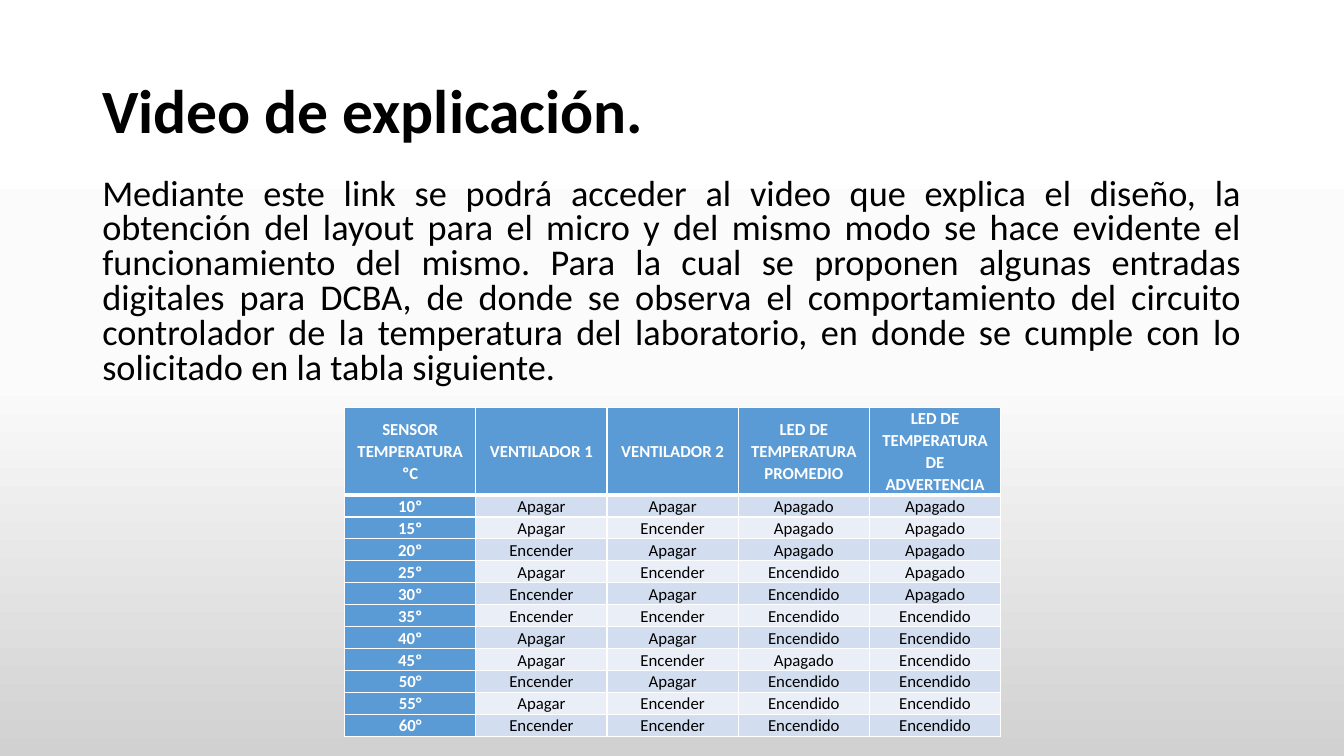
from copy import deepcopy

from pptx import Presentation
from pptx.dml.color import RGBColor as RGB
from pptx.enum.text import MSO_ANCHOR as Anchor, PP_ALIGN as Align
from pptx.oxml.ns import qn
from pptx.oxml.xmlchemy import OxmlElement as Elem
from pptx.util import Pt

FONT = "Calibri"
BLACK = RGB(0x00, 0x00, 0x00)
WHITE = RGB(0xFF, 0xFF, 0xFF)
BLUE = RGB(0x5B, 0x9B, 0xD5)
BANDS = [RGB(0xD2, 0xDE, 0xEF), RGB(0xEA, 0xEF, 0xF7)]
SHADES = [(0, WHITE), (0.5, RGB(0xFB, 0xFB, 0xFB)), (1, RGB(0xD1, 0xD1, 0xD1))]

TITLE = "Video de explicación."
BODY = (
    "Mediante este link se podrá acceder al video que explica el diseño, la "
    "obtención del layout para el micro y del mismo modo se hace evidente el "
    "funcionamiento del mismo. Para la cual se proponen algunas entradas "
    "digitales para DCBA, de donde se observa el comportamiento del circuito "
    "controlador de la temperatura del laboratorio, en donde se cumple con lo "
    "solicitado en la tabla siguiente."
)
HEADS = [
    "SENSOR TEMPERATURA ºC",
    "VENTILADOR 1",
    "VENTILADOR 2",
    "LED DE TEMPERATURA PROMEDIO",
    "LED DE TEMPERATURA DE ADVERTENCIA",
]
STATES = """\
10º Apagar Apagar Apagado Apagado
15º Apagar Encender Apagado Apagado
20º Encender Apagar Apagado Apagado
25º Apagar Encender Encendido Apagado
30º Encender Apagar Encendido Apagado
35º Encender Encender Encendido Encendido
40º Apagar Apagar Encendido Encendido
45º Apagar Encender Apagado Encendido
50° Encender Apagar Encendido Encendido
55° Apagar Encender Encendido Encendido
60° Encender Encender Encendido Encendido"""


def apply(item, style):
    for key, value in style.items():
        setattr(item, key, value)


def write(frame, text, para, font, color):
    line = frame.paragraphs[0]
    apply(line, para)
    run = line.add_run()
    run.text = text
    apply(run.font, {"name": FONT, **font})
    run.font.color.rgb = color


def add_back(slide):
    fill = slide.background.fill
    fill.gradient()
    fill.gradient_angle = 270
    stops = slide.element.find(".//" + qn("a:gsLst"))
    stops.append(deepcopy(stops[0]))
    for stop, (place, color) in zip(fill.gradient_stops, SHADES):
        stop.position = place
        stop.color.rgb = color


def add_text(slide, box, text, anchor, para, font):
    frame = slide.shapes.add_textbox(*map(Pt, box)).text_frame
    apply(frame, {"word_wrap": True, "vertical_anchor": anchor})
    write(frame, text, para, font, BLACK)


def add_edge(cell, side, width):
    edge = Elem("a:ln" + side)
    edge.set("w", str(Pt(width)))
    fill = Elem("a:solidFill")
    color = Elem("a:srgbClr")
    color.set("val", str(WHITE))
    fill.append(color)
    edge.append(fill)
    cell._tc.get_or_add_tcPr().append(edge)


def fill_cell(cell, text, row, col):
    head = row == 0 or col == 0
    apply(cell, {
        "margin_left": Pt(5), "margin_right": Pt(5),
        "margin_top": 0, "margin_bottom": 0,
        "vertical_anchor": Anchor.MIDDLE,
    })
    thick = {0: "B", 1: "T"}.get(row)
    for side in "LRTB":
        add_edge(cell, side, 3 if side == thick else 1)
    cell.fill.solid()
    cell.fill.fore_color.rgb = BLUE if head else BANDS[(row - 1) % 2]
    write(cell.text_frame, text,
          {"alignment": Align.CENTER, "line_spacing": 1.07},
          {"size": Pt(12), "bold": head}, WHITE if head else BLACK)


def add_grid(slide, box, rows, tall, low):
    shape = slide.shapes.add_table(len(rows), len(rows[0]), *map(Pt, box))
    table = shape.table
    for i, row in enumerate(rows):
        table.rows[i].height = Pt(low if i else tall)
        for j, text in enumerate(row):
            fill_cell(table.cell(i, j), text, i, j)


def main():
    deck = Presentation()
    apply(deck, {"slide_width": Pt(960), "slide_height": Pt(540)})
    slide = deck.slides.add_slide(deck.slide_layouts[6])
    add_back(slide)
    add_text(slide, (66, 28.75, 828, 104.4), TITLE, Anchor.MIDDLE,
             {"line_spacing": 0.9}, {"size": Pt(44), "bold": True})
    add_text(slide, (66, 123.8, 828, 173.5), BODY, Anchor.TOP,
             {"alignment": Align.JUSTIFY, "line_spacing": 0.8,
              "space_before": Pt(10)}, {"size": Pt(25.9)})
    rows = [HEADS] + [line.split() for line in STATES.splitlines()]
    add_grid(slide, (246.2, 290.9, 468.7, 235.4), rows, 62.7, 15.7)
    deck.save("out.pptx")


if __name__ == "__main__":
    main()
